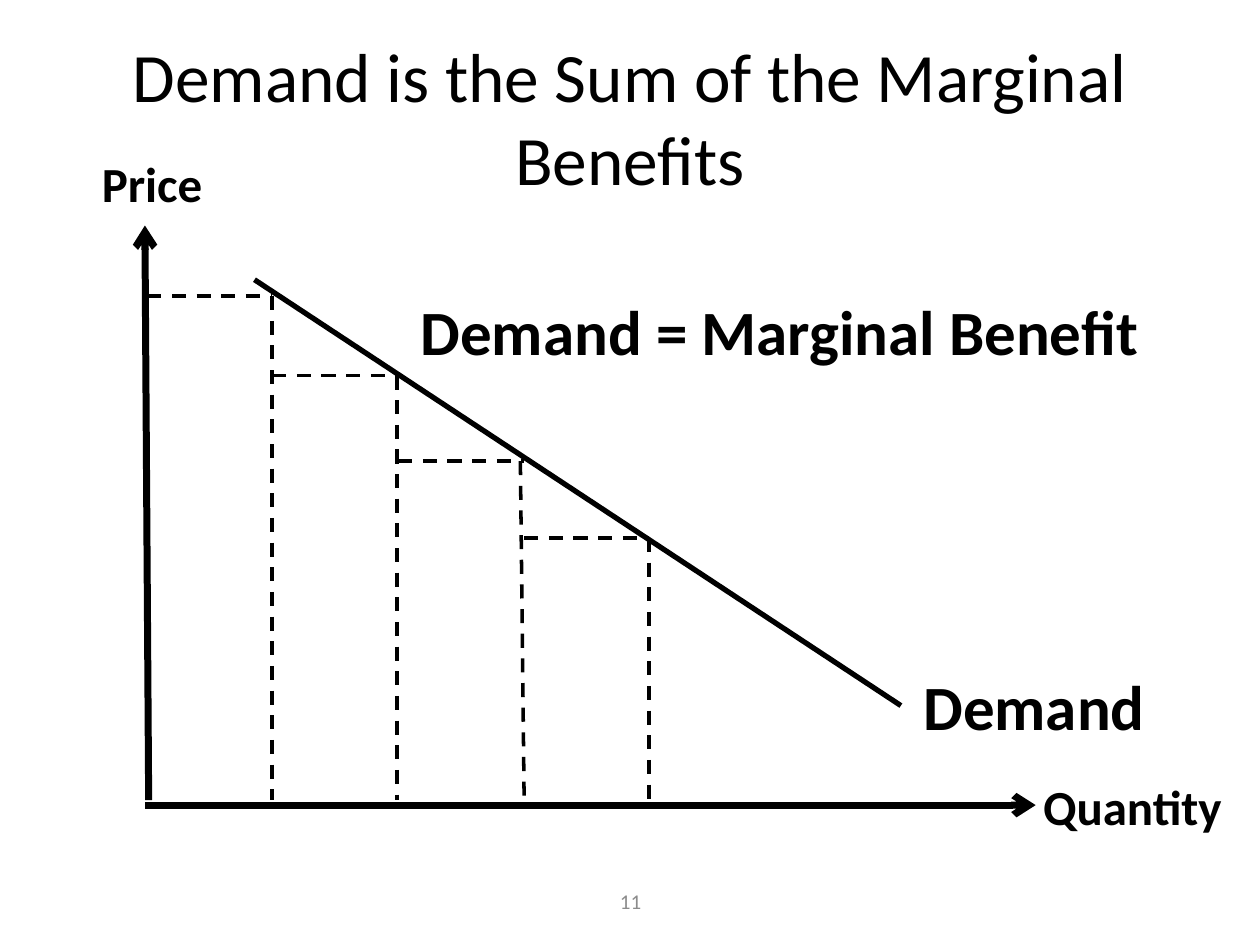
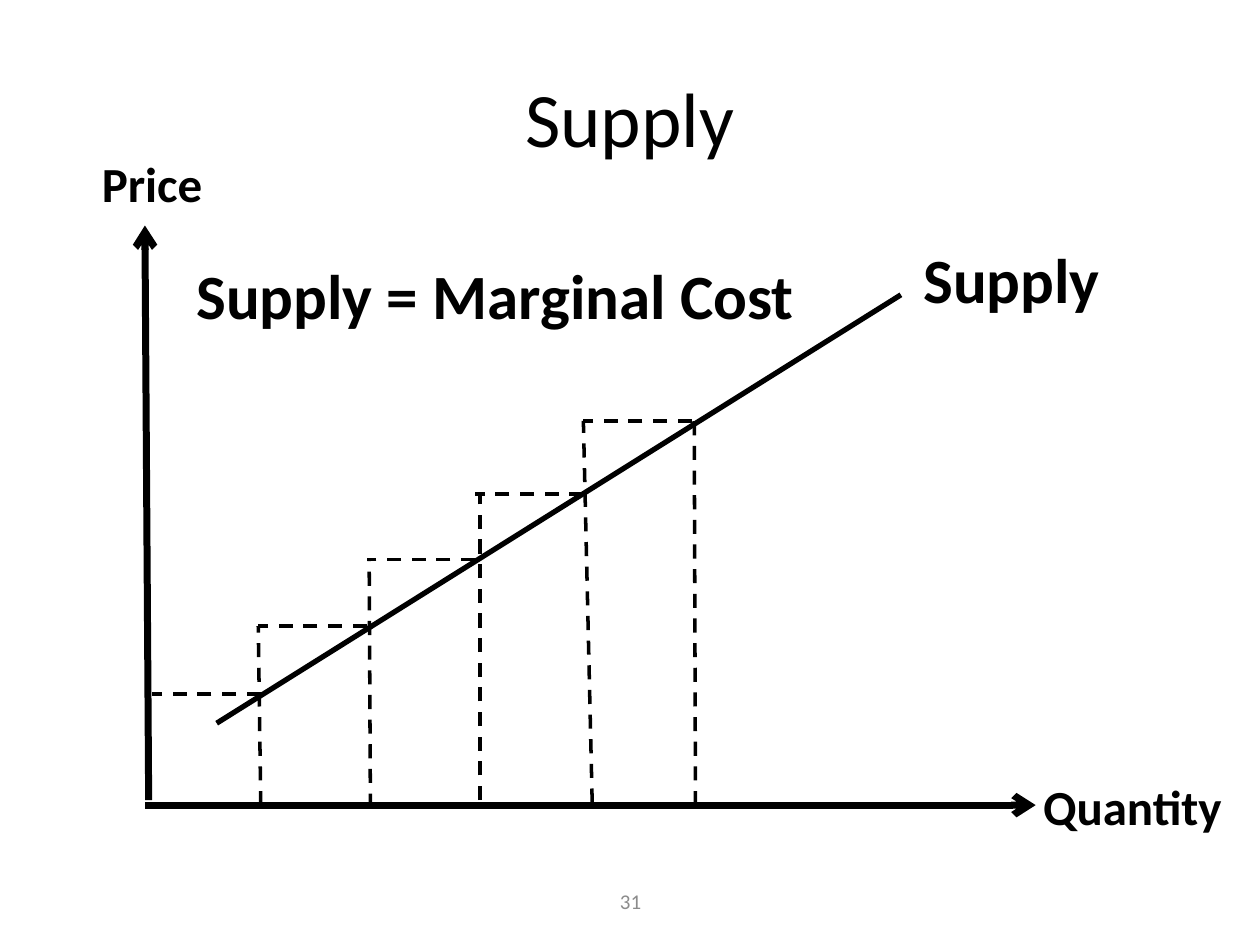
from lxml.etree import SubElement
from pptx import Presentation
from pptx.dml.color import RGBColor
from pptx.enum.dml import MSO_LINE
from pptx.enum.shapes import MSO_CONNECTOR
from pptx.enum.text import MSO_ANCHOR as ANCHOR, PP_ALIGN as ALIGN
from pptx.oxml.ns import qn
from pptx.util import Inches, Pt

COLORS = {"ink": "000000", "page_number": "8C8C8C", "paper": "FFFFFF"}

# Text formats
HEADING = {"size": Pt(44), "bold": False}
LONG_HEADING = {"size": Pt(39.6), "bold": False}
PAGE_NUMBER = {"size": Pt(12), "bold": False}
AXIS_LABEL = {"size": Pt(28), "bold": True}
CURVE_LABEL = {"size": Pt(36), "bold": True}

# Line formats
AXIS = {"width": Pt(4)}
CURVE = {"width": Pt(3)}
GUIDE = {"width": Pt(2), "dash_style": MSO_LINE.DASH}

# Each step is (left, right, price); each drop is (start x, start y, end x, end y)
GRAPHS = [
    {
        "title": "Demand is the Sum of the Marginal Benefits",
        "title_format": LONG_HEADING,
        "page": "11",
        "curve": (2.02, 2.22, 7.15, 5.6),
        "labels": [
            ("Demand", (7.23, 5.25, 1.98, 0.71)),
            ("Demand = Marginal Benefit", (3.24, 2.27, 5.96, 0.71)),
        ],
        "steps": [(1.17, 2.16, 2.35), (2.16, 3.15, 2.98),
                  (3.16, 4.16, 3.66), (4.16, 5.15, 4.27)],
        "drops": [(2.16, 2.35, 2.16, 6.35), (3.15, 2.98, 3.15, 6.35),
                  (4.13, 3.66, 4.16, 6.35), (5.15, 4.27, 5.15, 6.35)],
    },
    {
        "title": "Supply",
        "title_format": HEADING,
        "page": "31",
        "curve": (1.72, 5.74, 7.15, 2.34),
        "labels": [
            ("Supply", (7.23, 1.86, 1.62, 0.71)),
            ("Supply = Marginal Cost", (1.46, 1.99, 4.99, 0.71)),
        ],
        "steps": [(2.07, 1.21, 5.51), (2.91, 2.05, 4.97), (3.77, 2.91, 4.44),
                  (4.63, 3.77, 3.92), (5.49, 4.63, 3.34)],
        "drops": [(2.07, 6.39, 2.05, 4.97), (2.94, 6.41, 2.93, 4.44),
                  (3.81, 6.35, 3.81, 3.92), (4.7, 6.37, 4.63, 3.34),
                  (5.52, 6.39, 5.51, 3.34)],
    },
]


def add_text(slide, text, box, text_format, color="ink", centered=False):
    frame = slide.shapes.add_textbox(*map(Inches, box)).text_frame
    frame.word_wrap = centered
    frame.vertical_anchor = ANCHOR.MIDDLE if centered else ANCHOR.TOP
    paragraph = frame.paragraphs[0]
    paragraph.alignment = ALIGN.CENTER if centered else ALIGN.LEFT
    run = paragraph.add_run()
    run.text = text
    run.font.name = "Calibri"
    run.font.color.rgb = RGBColor.from_string(COLORS[color])
    for name, value in text_format.items():
        setattr(run.font, name, value)


def add_line(slide, ends, line_format, arrow=False):
    connector = slide.shapes.add_connector(MSO_CONNECTOR.STRAIGHT, *map(Inches, ends))
    line = connector.line
    line.color.rgb = RGBColor.from_string(COLORS["ink"])
    for name, value in line_format.items():
        setattr(line, name, value)
    properties = connector._element.spPr
    if arrow:
        SubElement(properties.find(qn("a:ln")), qn("a:tailEnd"), type="arrow")
    SubElement(properties, qn("a:effectLst"))


deck = Presentation()
deck.slide_width, deck.slide_height = Inches(10), Inches(7.5)

for graph in GRAPHS:
    slide = deck.slides.add_slide(deck.slide_layouts[6])
    slide.background.fill.solid()
    slide.background.fill.fore_color.rgb = RGBColor.from_string(COLORS["paper"])

    # Title and page number
    add_text(slide, graph["title"], (0.5, 0.3, 9, 1.25), graph["title_format"], centered=True)
    add_text(slide, graph["page"], (3.42, 6.95, 3.17, 0.4), PAGE_NUMBER,
             color="page_number", centered=True)

    # Axes
    add_line(slide, (1.18, 6.35, 1.15, 1.79), AXIS, arrow=True)
    add_line(slide, (1.15, 6.39, 8.22, 6.39), AXIS, arrow=True)
    add_text(slide, "Price", (0.71, 1.17, 1.01, 0.57), AXIS_LABEL)
    add_text(slide, "Quantity", (8.18, 6.11, 1.64, 0.57), AXIS_LABEL)

    # Curve and its labels
    add_line(slide, graph["curve"], CURVE)
    for label, box in graph["labels"]:
        add_text(slide, label, box, CURVE_LABEL)

    # Dashed steps along the curve
    for start, end, price in graph["steps"]:
        add_line(slide, (start, price, end, price), GUIDE)
    for drop in graph["drops"]:
        add_line(slide, drop, GUIDE)

deck.save("out.pptx")
